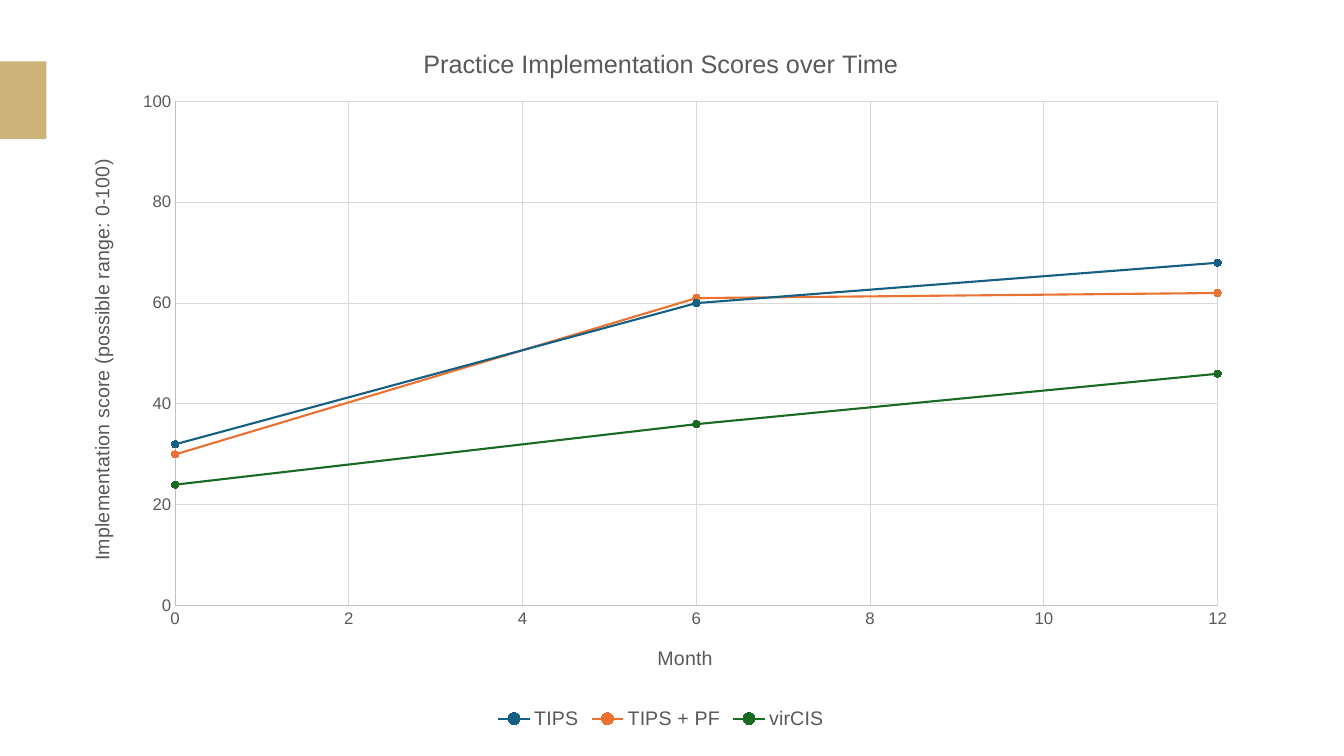
import pptx
import pptx.chart.data
import pptx.dml.color
import pptx.enum.chart
import pptx.enum.shapes
import pptx.oxml
import pptx.oxml.ns
import pptx.util
from dataclasses import dataclass

Inches = pptx.util.Inches
Pt = pptx.util.Pt


@dataclass(frozen=True)
class Theme:
    font: str = "Arial"
    accent: str = "CBB379"
    text: str = "595959"
    axis: str = "BFBFBF"
    grid: str = "D9D9D9"
    title_size: int = 18
    label_size: int = 14
    tick_size: int = 12


THEME = Theme()
MONTHS = (0, 6, 12)
# Practice group: (colour, scores by month)
SCORES = {
    "TIPS": ("156082", (32, 60, 68)),
    "TIPS + PF": ("E97132", (30, 61, 62)),
    "virCIS": ("196B24", (24, 36, 46)),
}


def rgb(value):
    return pptx.dml.color.RGBColor.from_string(value)


def style_font(font, size):
    font.name = THEME.font
    font.size = Pt(size)
    font.bold = False
    font.color.rgb = rgb(THEME.text)


def style_line(line, color, width=0.75):
    line.color.rgb = rgb(color)
    line.width = Pt(width)


def set_title(owner, text, size):
    """Title of a chart or of an axis."""
    tf = owner.text_frame
    tf.text = text
    style_font(tf.paragraphs[0].runs[0].font, size)


def format_axis(axis, title, maximum, step):
    axis.minimum_scale, axis.maximum_scale = 0, maximum
    axis.major_unit = step
    axis.major_tick_mark = axis.minor_tick_mark = pptx.enum.chart.XL_TICK_MARK.NONE
    axis.has_major_gridlines = True
    style_line(axis.major_gridlines.format.line, THEME.grid)
    style_line(axis.format.line, THEME.axis)
    style_font(axis.tick_labels.font, THEME.tick_size)
    axis.tick_labels.number_format = "General"
    axis.tick_labels.number_format_is_linked = False
    set_title(axis.axis_title, title, THEME.label_size)


def place_plot(chart, x, y, w, h):
    """Fix the inner plot area, in fractions of the chart."""
    qn = pptx.oxml.ns.qn
    area = chart.element.find(".//" + qn("c:plotArea"))
    for layout in area.findall(qn("c:layout")):
        area.remove(layout)
    area.insert(0, pptx.oxml.parse_xml(
        f'<c:layout {pptx.oxml.ns.nsdecls("c")}><c:manualLayout>'
        '<c:layoutTarget val="inner"/><c:xMode val="edge"/><c:yMode val="edge"/>'
        f'<c:x val="{x}"/><c:y val="{y}"/><c:w val="{w}"/><c:h val="{h}"/>'
        '</c:manualLayout></c:layout>'))


def add_accent(s, left, top, width, height):
    sp = s.shapes.add_shape(pptx.enum.shapes.MSO_SHAPE.RECTANGLE,
                            Inches(left), Inches(top), Inches(width), Inches(height))
    sp.shadow.inherit = False
    sp.fill.solid()
    sp.fill.fore_color.rgb = rgb(THEME.accent)
    sp.line.fill.background()


def add_score_chart(s, left, top, width, height):
    data = pptx.chart.data.XyChartData()
    for name, (_, scores) in SCORES.items():
        series = data.add_series(name)
        for month, score in zip(MONTHS, scores):
            series.add_data_point(month, score)
    chart = s.shapes.add_chart(
        pptx.enum.chart.XL_CHART_TYPE.XY_SCATTER_LINES,
        Inches(left), Inches(top), Inches(width), Inches(height), data).chart
    style_font(chart.font, 10)
    set_title(chart.chart_title, "Practice Implementation Scores over Time", THEME.title_size)
    chart.chart_title.include_in_layout = False

    # Axes
    format_axis(chart.category_axis, "Month", 12, 2)
    format_axis(chart.value_axis, "Implementation score (possible range: 0-100)", 100, 20)
    place_plot(chart, 0.09, 0.11, 0.88, 0.71)

    # Legend
    chart.has_legend = True
    chart.legend.position = pptx.enum.chart.XL_LEGEND_POSITION.BOTTOM
    chart.legend.include_in_layout = False
    style_font(chart.legend.font, THEME.label_size)

    # Series
    plot = chart.plots[0]
    plot.vary_by_categories = False
    for series, (color, _) in zip(plot.series, SCORES.values()):
        style_line(series.format.line, color, 1.5)
        marker = series.marker
        marker.style = pptx.enum.chart.XL_MARKER_STYLE.CIRCLE
        marker.size = 5
        marker.format.fill.solid()
        marker.format.fill.fore_color.rgb = rgb(color)
        style_line(marker.format.line, color)


def main():
    prs = pptx.Presentation()
    prs.slide_width, prs.slide_height = Inches(13.33), Inches(7.5)
    s = prs.slides.add_slide(prs.slide_layouts[6])
    add_accent(s, 0, 0.61, 0.46, 0.77)
    add_score_chart(s, 0.68, 0.23, 11.75, 7.05)
    prs.save("out.pptx")


if __name__ == "__main__":
    main()
